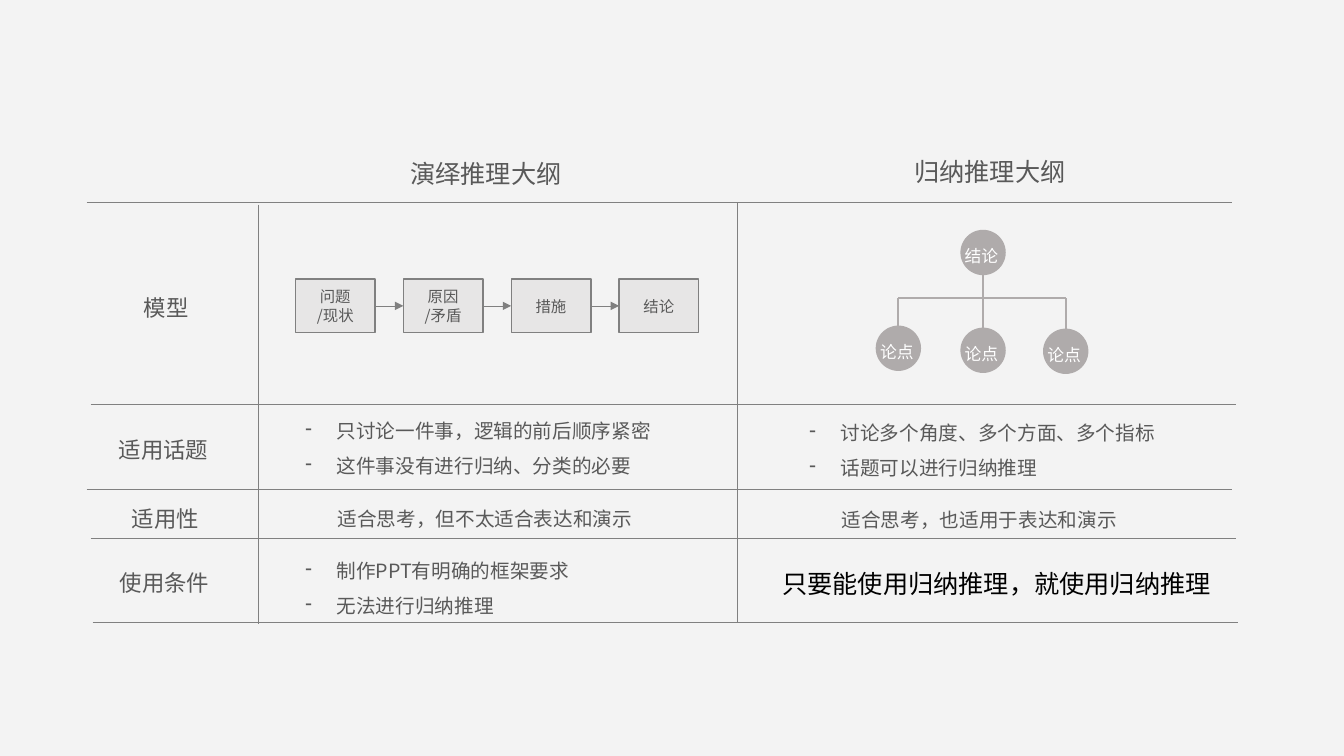
from dataclasses import dataclass

from lxml import etree
from pptx import Presentation
from pptx import util as u
from pptx.dml.color import RGBColor
from pptx.enum import shapes, text
from pptx.oxml.ns import qn


# Theme: colours, font and type sizes
@dataclass(frozen=True)
class Theme:
    font: str = "Noto Sans CJK SC"
    back: str = "F3F3F3"
    body: str = "595959"
    strong: str = "000000"
    light: str = "FFFFFF"
    rule: str = "808080"
    box: str = "E7E6E6"
    node: str = "AFABAB"
    heading: int = 18
    row_label: int = 16
    detail: int = 14
    node_label: int = 12
    box_label: int = 11


T = Theme()
CELL = 0.1  # side of one grid column or row, in inches


@dataclass(frozen=True)
class Label:
    col: float
    row: float
    cols: float
    rows: float
    text: str
    size: int = T.detail
    color: str = T.body
    bullets: bool = False


@dataclass(frozen=True)
class Rule:
    col1: float
    row1: float
    col2: float
    row2: float
    color: str = T.rule
    width: float = 0.5


@dataclass(frozen=True)
class Node:
    col: float
    row: float
    text: str


def grid(n: float) -> int:
    return u.Inches(n * CELL)


def rgb(color: str) -> RGBColor:
    return RGBColor.from_string(color)


# Drawing functions
def style_text(tf, size: int, color: str) -> None:
    for p in tf.paragraphs:
        for r in p.runs:
            r.font.name = T.font
            r.font.size = u.Pt(size)
            r.font.color.rgb = rgb(color)
            ea = etree.SubElement(r.font._element, qn("a:ea"))
            ea.set("typeface", T.font)


def add_bullet(p) -> None:
    pPr = p._p.get_or_add_pPr()
    indent = u.Inches(0.31)
    pPr.set("marL", str(indent))
    pPr.set("indent", str(-indent))
    etree.SubElement(pPr, qn("a:buChar")).set("char", "-")


def add_label(parent, label: Label) -> None:
    sp = parent.add_textbox(grid(label.col), grid(label.row),
                            grid(label.cols), grid(label.rows))
    tf = sp.text_frame
    tf.word_wrap = True
    tf.text = label.text
    for p in tf.paragraphs:
        p.line_spacing = 1.5
        if label.bullets:
            add_bullet(p)
    style_text(tf, label.size, label.color)


def add_rule(parent, rule: Rule):
    line = parent.add_connector(shapes.MSO_CONNECTOR.STRAIGHT,
                                grid(rule.col1), grid(rule.row1),
                                grid(rule.col2), grid(rule.row2))
    line.line.color.rgb = rgb(rule.color)
    line.line.width = u.Pt(rule.width)
    etree.SubElement(line._element.spPr, qn("a:effectLst"))
    return line


def add_arrow(parent, start, end) -> None:
    arrow = add_rule(parent, Rule(0, 0, 0, 0))
    arrow.begin_connect(start, 3)
    arrow.end_connect(end, 1)
    ln = arrow.line._get_or_add_ln()
    etree.SubElement(ln, qn("a:tailEnd")).set("type", "triangle")


def add_box(parent, col: float, row: float, words: str):
    sp = parent.add_shape(shapes.MSO_SHAPE.RECTANGLE, grid(col), grid(row),
                          grid(7.9), grid(5.3))
    sp.shadow.inherit = False
    sp.fill.solid()
    sp.fill.fore_color.rgb = rgb(T.box)
    sp.line.color.rgb = rgb(T.rule)
    sp.line.width = u.Pt(1)
    tf = sp.text_frame
    tf.text = words
    tf.vertical_anchor = text.MSO_ANCHOR.MIDDLE
    for p in tf.paragraphs:
        p.alignment = text.PP_ALIGN.CENTER
    style_text(tf, T.box_label, T.body)
    return sp


def add_node(parent, node: Node) -> None:
    size = 4.5
    sp = parent.add_shape(shapes.MSO_SHAPE.OVAL, grid(node.col - size / 2),
                          grid(node.row), grid(size), grid(size))
    sp.shadow.inherit = False
    sp.fill.solid()
    sp.fill.fore_color.rgb = rgb(T.node)
    sp.line.fill.background()
    add_label(parent, Label(node.col - 2.8, node.row + 0.1, 6.6, 3.7,
                            node.text, T.node_label, T.light))


# Content
ROW_LINES = [(8.6, 20.1), (9, 40.1), (8.6, 48.5), (9, 53.4), (9.2, 61.7)]
RULES = [Rule(col, row, col + 113.6, row) for col, row in ROW_LINES]
RULES += [Rule(25.6, 20.3, 25.6, 61.9), Rule(73.1, 20.1, 73.1, 61.7)]

LABELS = [
    Label(39.7, 13.7, 19.2, 5.6, "演绎推理大纲", T.heading),
    Label(89.7, 13.5, 17.6, 5.6, "归纳推理大纲", T.heading),
    Label(13.3, 27.4, 8.3, 5, "模型", T.row_label),
    Label(10.8, 41.4, 12.6, 4.6, "适用话题", T.row_label),
    Label(12.1, 48.3, 9.5, 5, "适用性", T.row_label),
    Label(10.9, 54.6, 12.1, 5, "使用条件", T.row_label),
    Label(29.3, 39.9, 40, 8.1,
          "只讨论一件事，逻辑的前后顺序紧密\n这件事没有进行归纳、分类的必要", bullets=True),
    Label(79.3, 40.1, 43.3, 8.1,
          "讨论多个角度、多个方面、多个指标\n话题可以进行归纳推理", bullets=True),
    Label(32.5, 48.6, 31.6, 4.5, "适合思考，但不太适合表达和演示"),
    Label(82.5, 48.7, 29.8, 4.5, "适合思考，也适用于表达和演示"),
    Label(29.3, 53.8, 40, 8.1,
          "制作PPT有明确的框架要求\n无法进行归纳推理", bullets=True),
    Label(76.6, 54.4, 45.6, 5.6, "只要能使用归纳推理，就使用归纳推理",
          T.heading, T.strong),
]

STEPS = ["问题\n/现状", "原因\n/矛盾", "措施", "结论"]
ROOT = Node(97.5, 22.8, "结论")
LEAVES = [Node(89.1, 32.3, "论点"), Node(97.5, 32.5, "论点"),
          Node(105.7, 32.6, "论点")]


def main() -> None:
    prs = Presentation()
    prs.slide_width, prs.slide_height = u.Inches(13.33), u.Inches(7.5)
    s = prs.slides.add_slide(prs.slide_layouts[6])
    s.background.fill.solid()
    s.background.fill.fore_color.rgb = rgb(T.back)

    # Table rules and wording
    for rule in RULES:
        add_rule(s.shapes, rule)
    for label in LABELS:
        add_label(s.shapes, label)

    # Deductive chain
    chain = s.shapes.add_group_shape().shapes
    boxes = [add_box(chain, 29.3 + 10.7 * i, 27.7, step)
             for i, step in enumerate(STEPS)]
    for start, end in zip(boxes, boxes[1:]):
        add_arrow(chain, start, end)

    # Inductive tree
    tree = s.shapes.add_group_shape().shapes
    bar = 29.6
    add_rule(tree, Rule(LEAVES[0].col, bar, LEAVES[-1].col, bar, T.node, 1.25))
    for leaf in LEAVES:
        top = ROOT.row + 2.6 if leaf.col == ROOT.col else bar
        add_rule(tree, Rule(leaf.col, top, leaf.col, 33.7, T.node, 1.25))
    for node in [ROOT, *LEAVES]:
        add_node(tree, node)

    prs.save("out.pptx")


if __name__ == "__main__":
    main()
